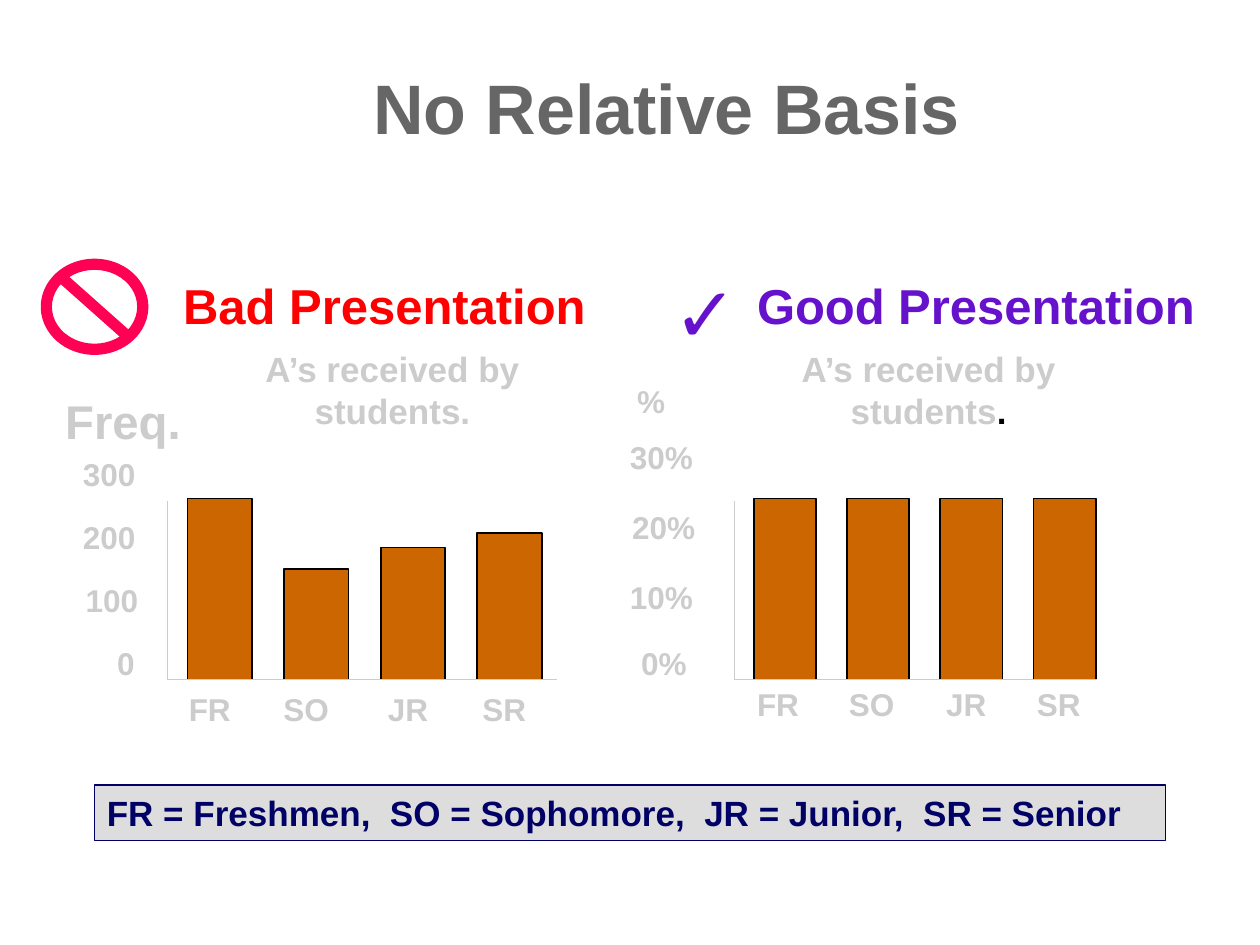
"""Build a slide that sets raw counts against relative shares."""
from dataclasses import dataclass
from typing import NamedTuple

from lxml import etree
from pptx import Presentation
from pptx import util as u
from pptx.dml.color import RGBColor
from pptx.enum import shapes, text
from pptx.oxml import ns


@dataclass(frozen=True)
class Theme:
    """Colours, font and type sizes."""
    font: str = "Arial"
    title: str = "666666"
    bad: str = "FF0000"
    good: str = "6611CC"
    pale: str = "CCCCCC"
    bar: str = "CC6600"
    black: str = "000000"
    ban: str = "FF0054"
    navy: str = "000066"
    panel: str = "DDDDDD"
    huge: int = 44
    large: int = 40
    head: int = 28
    unit: int = 27
    body: int = 20
    label: int = 18


class Box(NamedTuple):
    """Left, top, width and height in points."""
    left: float
    top: float
    width: float
    height: float

    def emu(self) -> list[u.Length]:
        """Give the four lengths for a shape call."""
        return [u.Pt(n) for n in self]


class Label(NamedTuple):
    """Words with their place."""
    words: str
    box: Box


@dataclass(frozen=True)
class Plot:
    """One hand-drawn bar plot."""
    axis: float
    end: float
    first: float
    step: float
    width: float
    highs: tuple[float, ...]
    names: tuple[float, ...]
    drop: float
    ticks: tuple[Label, ...]


THEME = Theme()
BASE = 388.3
YEARS = ("FR", "SO", "JR", "SR")
NAME_WIDE = (46, 49, 44.6, 47.5)
TALL = 36
FULL = 103.5

COUNTS = Plot(95.8, 318.2, 107.2, 55.2, 36.8, (FULL, 63, 75.5, 83.7),
              (100.8, 154.8, 214.6, 268.6), 391, (
                  Label("0", Box(59.8, 364.3, 27.4, TALL)),
                  Label("100", Box(41.8, 328.3, 66.2, TALL)),
                  Label("200", Box(40.3, 292.3, 66.2, TALL)),
                  Label("300", Box(40.3, 256.3, 62, TALL))))
SHARES = Plot(419.8, 627, 430.7, 53.3, 35.6, (FULL,) * 4,
              (425.5, 478, 533.5, 585.4), 388.1, (
                  Label("0%", Box(359.3, 364.3, 50.4, TALL)),
                  Label("10%", Box(352.8, 326.9, 62, TALL)),
                  Label("20%", Box(354.2, 286.6, 62.6, TALL)),
                  Label("30%", Box(352.8, 247, 62, TALL)),
                  Label("%", Box(357, 214.6, 40, TALL))))


def tint(code: str) -> RGBColor:
    """Turn a hex code into a colour."""
    return RGBColor.from_string(code)


def style(run, size: int, code: str, bold: bool = True) -> None:
    """Set the type of one run."""
    run.font.name = THEME.font
    run.font.size = u.Pt(size)
    run.font.bold = bold
    run.font.color.rgb = tint(code)


def fill_text(shape, words: str, size: int, code: str,
              mid: bool = False, bold: bool = True):
    """Put one styled paragraph in a shape and return it."""
    frame = shape.text_frame
    frame.text = words
    frame.word_wrap = True
    frame.vertical_anchor = text.MSO_ANCHOR.TOP
    para = frame.paragraphs[0]
    para.alignment = text.PP_ALIGN.CENTER if mid else text.PP_ALIGN.LEFT
    style(para.runs[0], size, code, bold)
    return para


def write(slide, label: Label, size: int, code: str,
          mid: bool = False, bold: bool = True):
    """Add a text box and return its paragraph."""
    shape = slide.shapes.add_textbox(*label.box.emu())
    return fill_text(shape, label.words, size, code, mid, bold)


def block(slide, kind: shapes.MSO_SHAPE, box: Box, fill: str, edge: str):
    """Add a filled preset shape with a thin edge."""
    shape = slide.shapes.add_shape(kind, *box.emu())
    shape.shadow.inherit = False
    shape.fill.solid()
    shape.fill.fore_color.rgb = tint(fill)
    shape.line.color.rgb = tint(edge)
    shape.line.width = u.Pt(1)
    return shape


def rule(slide, left: float, top: float, right: float, low: float) -> None:
    """Draw one axis line."""
    ends = [u.Pt(n) for n in (left, top, right, low)]
    line = slide.shapes.add_connector(shapes.MSO_CONNECTOR.STRAIGHT, *ends)
    line.line.color.rgb = tint(THEME.pale)
    line.line.width = u.Pt(1)
    etree.SubElement(line._element.spPr, ns.qn("a:effectLst"))


def draw(slide, plot: Plot) -> None:
    """Draw the bars, axes and labels of a plot."""
    for i, high in enumerate(plot.highs):
        bar = Box(plot.first + i * plot.step, BASE - high, plot.width, high)
        block(slide, shapes.MSO_SHAPE.RECTANGLE, bar, THEME.bar, THEME.black)
    rule(slide, plot.axis, 286.5, plot.axis, BASE)
    rule(slide, plot.axis, BASE, plot.end, BASE)
    names = [Label(year, Box(left, plot.drop, wide, TALL))
             for year, left, wide in zip(YEARS, plot.names, NAME_WIDE)]
    for label in (*names, *plot.ticks):
        write(slide, label, THEME.label, THEME.pale)


def main() -> None:
    """Build and save the slide."""
    deck = Presentation()
    deck.slide_width, deck.slide_height = u.Pt(720), u.Pt(540)
    slide = deck.slides.add_slide(deck.slide_layouts[6])

    title = slide.shapes.add_textbox(*Box(153.4, 18, 455, 70.6).emu())
    fill_text(title, "No Relative Basis", THEME.large, THEME.title, mid=True)
    title.text_frame.vertical_anchor = text.MSO_ANCHOR.BOTTOM

    good = Label("Good Presentation", Box(396, 154.1, 323.3, 40.3))
    bad = Label("Bad Presentation", Box(59.8, 154.1, 319.7, 40.3))
    write(slide, good, THEME.head, THEME.good, mid=True)
    write(slide, bad, THEME.head, THEME.bad, mid=True)

    topic = "A’s received by students"
    left = Label(topic + ".", Box(130.3, 195.1, 187.9, 54.7))
    right = Label(topic, Box(442.8, 195.1, 175.7, 54.7))
    write(slide, left, THEME.body, THEME.pale, mid=True)
    para = write(slide, right, THEME.body, THEME.pale, mid=True)
    stop = para.add_run()
    stop.text = "."
    style(stop, THEME.body, THEME.black)

    draw(slide, COUNTS)
    draw(slide, SHARES)
    unit = Label("Freq.", Box(30.2, 220.3, 86, 39.6))
    write(slide, unit, THEME.unit, THEME.pale)

    ban = block(slide, shapes.MSO_SHAPE.NO_SYMBOL,
                Box(23.8, 148.3, 60.5, 54), THEME.ban, THEME.ban)
    ban.adjustments[0] = 0.1
    tick = Label("✓", Box(378, 148.3, 65.5, 59.8))
    write(slide, tick, THEME.huge, THEME.good, bold=False)

    key = block(slide, shapes.MSO_SHAPE.RECTANGLE,
                Box(54, 448.6, 612, 31.7), THEME.panel, THEME.navy)
    fill_text(key, "FR = Freshmen,  SO = Sophomore,  JR = Junior,  SR = Senior",
              THEME.body, THEME.navy)
    deck.save("out.pptx")


if __name__ == "__main__":
    main()
